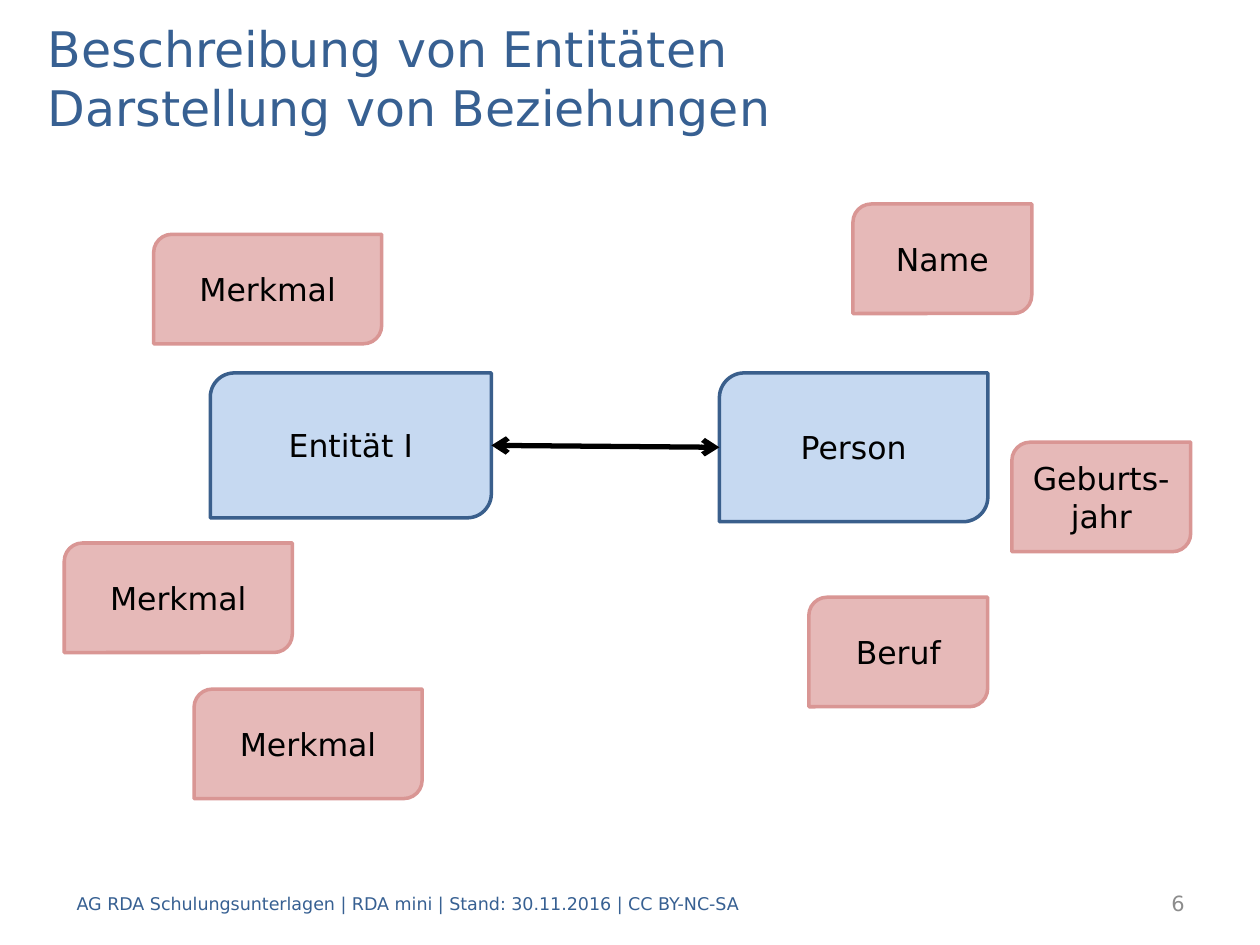
from lxml import etree
from pptx import Presentation
from pptx import util as u
from pptx.dml.color import RGBColor
from pptx.enum import shapes, text
from pptx.oxml import ns

FONT = "DejaVu Sans"
TITLE_BLUE = "376092"
BLUE = ("C6D9F1", "3A5F8C")
ROSE = ("E6B9B8", "D99694")
ENTITY_TOP = 213.1
ATTRIBUTE_HEIGHT = 62.6
GENERAL_WIDTH, PERSON_WIDTH = 130.3, 102.2


def color(value):
    return RGBColor.from_string(value)


class SlideBuilder:
    def __init__(self, slide):
        self.slide = slide

    def set_text(self, shape, lines, size, ink, align):
        """Fill a shape with one paragraph whose lines are parted by line breaks."""
        frame = shape.text_frame
        frame.word_wrap = True
        frame.auto_size = text.MSO_AUTO_SIZE.NONE
        frame.vertical_anchor = text.MSO_ANCHOR.MIDDLE
        paragraph = frame.paragraphs[0]
        paragraph.alignment = align
        for index, line in enumerate(lines):
            if index:
                paragraph.add_line_break()
            run = paragraph.add_run()
            run.text = line
            run.font.name = FONT
            run.font.size = u.Pt(size)
            run.font.color.rgb = color(ink)

    def title(self, left, top, width, height, lines):
        shape = self.slide.shapes.title
        shape.left, shape.top = u.Pt(left), u.Pt(top)
        shape.width, shape.height = u.Pt(width), u.Pt(height)
        self.set_text(shape, lines, 28, TITLE_BLUE, text.PP_ALIGN.LEFT)
        shape.text_frame.margin_top = u.Pt(0)
        shape.text_frame.margin_bottom = u.Pt(32)

    def box(self, left, top, width, height, label, colors):
        shape = self.slide.shapes.add_shape(
            shapes.MSO_SHAPE.ROUND_2_DIAG_RECTANGLE,
            u.Pt(left), u.Pt(top), u.Pt(width), u.Pt(height))
        fill, line = colors
        shape.shadow.inherit = False
        shape.fill.solid()
        shape.fill.fore_color.rgb = color(fill)
        shape.line.color.rgb = color(line)
        shape.line.width = u.Pt(2)
        self.set_text(shape, [label], 18, "000000", text.PP_ALIGN.CENTER)
        return shape

    def double_arrow(self, start, end):
        """Join the right side of one box to the left side of another."""
        connector = self.slide.shapes.add_connector(
            shapes.MSO_CONNECTOR.STRAIGHT,
            start.left + start.width, start.top + start.height // 2,
            end.left, end.top + end.height // 2)
        connector.line.color.rgb = color("000000")
        connector.line.width = u.Pt(3)
        properties = connector._element.spPr
        line = properties.find(ns.qn("a:ln"))
        for tag in ("a:headEnd", "a:tailEnd"):
            etree.SubElement(line, ns.qn(tag), type="arrow")
        etree.SubElement(properties, ns.qn("a:effectLst"))

    def label(self, left, width, words, size, ink, align):
        shape = self.slide.shapes.add_textbox(
            u.Pt(left), u.Pt(501.8), u.Pt(width), u.Pt(28.8))
        self.set_text(shape, [words], size, ink, align)


def main():
    presentation = Presentation()
    presentation.slide_width, presentation.slide_height = u.Pt(720), u.Pt(540)
    slide = presentation.slides.add_slide(presentation.slide_layouts[5])
    builder = SlideBuilder(slide)

    builder.title(20.2, 14.4, 680.4, 91.4,
                  ["Beschreibung von Entitäten", "Darstellung von Beziehungen"])

    entity = builder.box(120.2, ENTITY_TOP, 160.6, 82.8, "Entität I", BLUE)
    person = builder.box(411.1, ENTITY_TOP, 153.4, 85, "Person", BLUE)

    attributes = [
        (87.8, 133.9, GENERAL_WIDTH, "Merkmal"),
        (36.7, 310.3, GENERAL_WIDTH, "Merkmal"),
        (110.9, 393.8, GENERAL_WIDTH, "Merkmal"),
        (487.4, 116.6, PERSON_WIDTH, "Name"),
        (578.2, 252.7, PERSON_WIDTH, "Geburts-jahr"),
        (462.2, 341.3, PERSON_WIDTH, "Beruf"),
    ]
    for left, top, width, name in attributes:
        builder.box(left, top, width, ATTRIBUTE_HEIGHT, name, ROSE)

    builder.double_arrow(entity, person)
    builder.label(569.5, 114.5, "6", 12, "8C8C8C", text.PP_ALIGN.RIGHT)
    builder.label(36.7, 612,
                  "AG RDA Schulungsunterlagen | RDA mini | Stand: 30.11.2016 | CC BY-NC-SA",
                  10, TITLE_BLUE, text.PP_ALIGN.LEFT)

    presentation.save("out.pptx")


if __name__ == "__main__":
    main()
